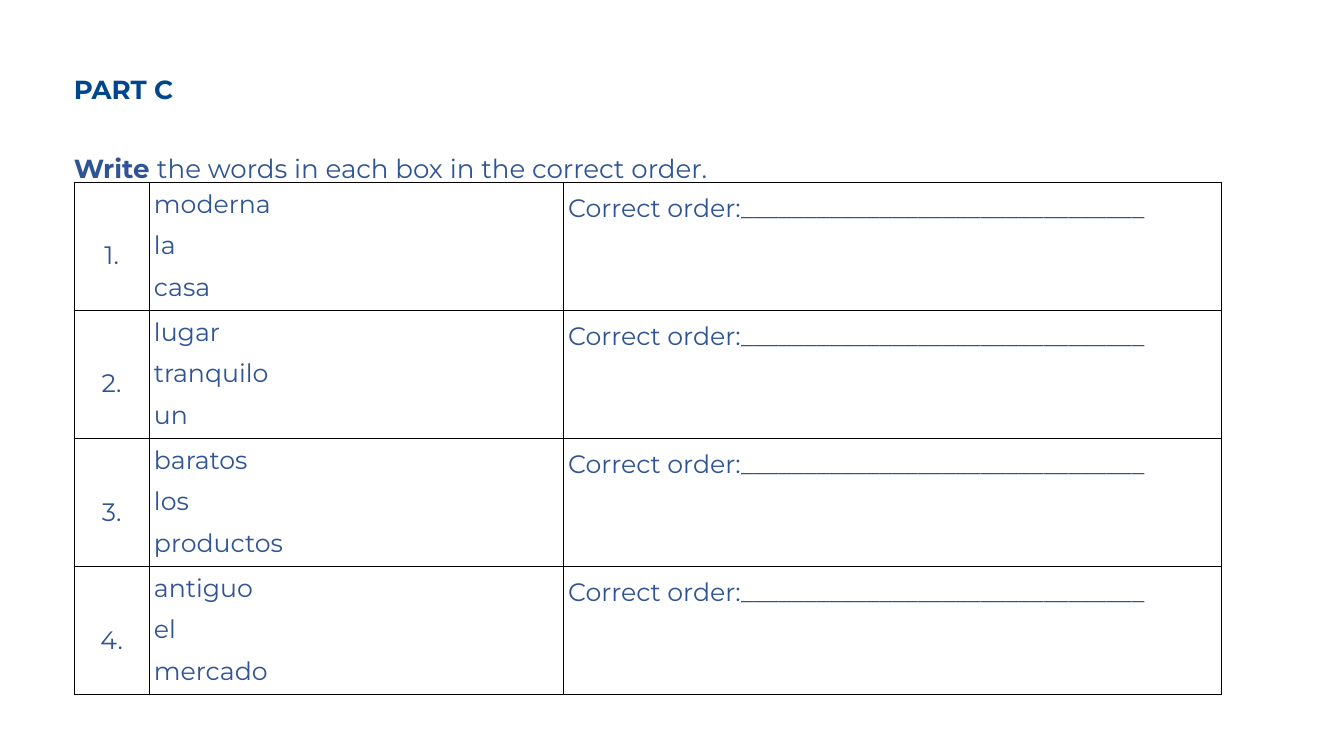
from dataclasses import dataclass

from lxml.etree import SubElement
from pptx import Presentation
from pptx.dml.color import RGBColor
from pptx.enum.text import MSO_ANCHOR as Anchor, PP_ALIGN as Align
from pptx.oxml.ns import qn
from pptx.slide import Slide
from pptx.util import Cm, Pt

COLORS = {"title": "00468C", "text": "2F5496", "border": "000000"}
WORD_SETS = [
    ["moderna", "la", "casa"],
    ["lugar", "tranquilo", "un"],
    ["baratos", "los", "productos"],
    ["antiguo", "el", "mercado"],
]
COLUMN_WIDTHS = [2.84, 15.65, 24.87]
ROW_HEIGHT = 4.84


@dataclass
class Worksheet:
    """Holds the style and the slide, and adds each kind of element."""

    slide: Slide
    font: str = "Montserrat"
    heading_size: int = 28
    table_size: int = 27

    def style(self, paragraph, size, color, bold=None, spacing=None, before=None):
        paragraph.font.name = self.font
        paragraph.font.size = Pt(size)
        paragraph.font.bold = bold
        paragraph.font.color.rgb = RGBColor.from_string(COLORS[color])
        if spacing:
            paragraph.line_spacing = spacing
        if before:
            paragraph.space_before = Pt(before)

    def heading(self, title, verb, instruction):
        box = self.slide.shapes.add_textbox(Cm(2.54), Cm(2.44), Cm(43.61), Cm(6.32))
        frame = box.text_frame
        frame.word_wrap = True
        frame.margin_left = frame.margin_right = Cm(0.25)
        frame.margin_top = frame.margin_bottom = Cm(0.25)
        paragraph = frame.paragraphs[0]
        paragraph.text = title
        self.style(paragraph, self.heading_size, "title", True, 1.08)
        paragraph = frame.add_paragraph()
        run = paragraph.add_run()
        run.text = verb
        run.font.bold = True
        paragraph.add_run().text = instruction
        self.style(paragraph, self.heading_size, "text", spacing=1.15, before=45.5)

    def border(self, cell):
        properties = cell._tc.get_or_add_tcPr()
        for position, side in enumerate(("lnL", "lnR", "lnT", "lnB")):
            line = SubElement(properties, qn(f"a:{side}"), w=str(Pt(1)))
            fill = SubElement(line, qn("a:solidFill"))
            SubElement(fill, qn("a:srgbClr"), val=COLORS["border"])
            properties.insert(position, line)

    def cell(self, cell, lines, align=Align.LEFT, spacing=None, top=0.25):
        cell.fill.background()
        cell.margin_left = cell.margin_right = Cm(0.18)
        cell.margin_top, cell.margin_bottom = Cm(top), Cm(0.25)
        cell.vertical_anchor = Anchor.TOP
        self.border(cell)
        frame = cell.text_frame
        for index, line in enumerate(lines):
            paragraph = frame.add_paragraph() if index else frame.paragraphs[0]
            paragraph.text = line
            paragraph.alignment = align
            before = 12 if index else None
            self.style(paragraph, self.table_size, "text", spacing=spacing, before=before)

    def exercise_table(self, word_sets):
        rows = len(word_sets)
        table = self.slide.shapes.add_table(
            rows, len(COLUMN_WIDTHS), Cm(2.8), Cm(6.88),
            Cm(sum(COLUMN_WIDTHS)), Cm(ROW_HEIGHT * rows),
        ).table
        table.first_row = table.horz_banding = False
        for column, width in zip(table.columns, COLUMN_WIDTHS):
            column.width = Cm(width)
        answer = "Correct order:" + "_" * 32
        for index, words in enumerate(word_sets):
            table.rows[index].height = Cm(ROW_HEIGHT)
            self.cell(table.cell(index, 0), [f"{index + 1}."], Align.CENTER, 1.15, top=2.04)
            self.cell(table.cell(index, 1), words)
            self.cell(table.cell(index, 2), [answer], spacing=1.15)


def main():
    presentation = Presentation()
    presentation.slide_width, presentation.slide_height = Cm(50.8), Cm(28.58)
    worksheet = Worksheet(presentation.slides.add_slide(presentation.slide_layouts[6]))
    worksheet.heading("PART C", "Write ", "the words in each box in the correct order.")
    worksheet.exercise_table(WORD_SETS)
    presentation.save("out.pptx")


if __name__ == "__main__":
    main()
